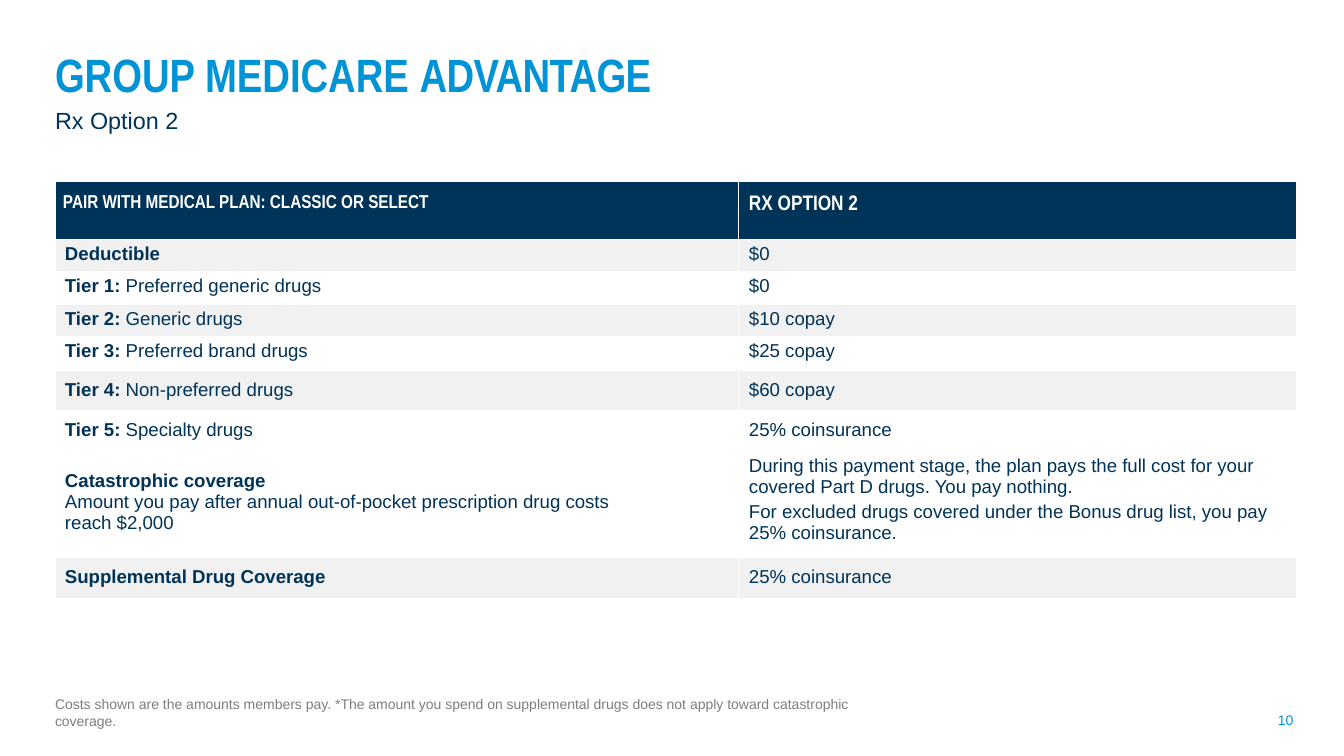
from dataclasses import dataclass

from lxml.etree import SubElement
from pptx import Presentation
from pptx.dml.color import RGBColor
from pptx.enum.text import MSO_ANCHOR
from pptx.oxml.ns import qn
from pptx.util import Emu, Pt

PX = 914400 // 84
NAVY, BLUE, GRAY, BAND, WHITE = "003358", "0093D6", "7E7E7E", "F1F1F1", "FFFFFF"
BODY_FONT, HEAD_FONT = "Arial", "Arial Narrow"


@dataclass(frozen=True)
class Span:
    text: str
    bold: bool = False
    tracking: float = 0


@dataclass(frozen=True)
class Para:
    spans: tuple[Span, ...]
    size: int = 16
    color: str = NAVY
    font: str = BODY_FONT
    before: float = 0


@dataclass(frozen=True)
class Row:
    height: int
    label: tuple[Para, ...]
    value: tuple[Para, ...]
    top: int
    label_top: int
    fill: str | None = None
    label_left: int = 10
    label_right: int = 0


def px(length: int) -> Emu:
    return Emu(length * PX)


def rgb(color: str) -> RGBColor:
    return RGBColor.from_string(color)


def write(frame, paras: tuple[Para, ...]) -> None:
    for index, item in enumerate(paras):
        para = frame.paragraphs[0] if index == 0 else frame.add_paragraph()
        para.space_before = Pt(item.before)
        para.font.name = item.font
        para.font.size = Pt(item.size)
        para.font.color.rgb = rgb(item.color)
        bolds = {span.bold for span in item.spans}
        if len(bolds) == 1:
            para.font.bold = bolds.pop()
        for span in item.spans:
            run = para.add_run()
            run.text = span.text
            if para.font.bold is None:
                run.font.bold = span.bold
            if span.tracking:
                run._r.get_or_add_rPr().set("spc", str(round(span.tracking * 100)))


def add_text(slide, left: int, top: int, width: int, height: int,
             paras: tuple[Para, ...], inset_left: int = 0, inset_top: int = 1) -> None:
    box = slide.shapes.add_textbox(px(left), px(top), px(width), px(height))
    frame = box.text_frame
    frame.word_wrap = True
    frame.margin_left, frame.margin_top = px(inset_left), px(inset_top)
    frame.margin_right = frame.margin_bottom = 0
    write(frame, paras)


def add_borders(cell) -> None:
    """Give the cell white one-point lines; call before setting its fill."""
    properties = cell._tc.get_or_add_tcPr()
    for side in ("a:lnL", "a:lnR", "a:lnT", "a:lnB"):
        line = SubElement(properties, qn(side), w=str(Pt(1)))
        SubElement(SubElement(line, qn("a:solidFill")), qn("a:srgbClr"), val=WHITE)


def fill_cell(cell, paras: tuple[Para, ...], fill: str | None,
              left: int, top: int, right: int = 0) -> None:
    add_borders(cell)
    if fill:
        cell.fill.solid()
        cell.fill.fore_color.rgb = rgb(fill)
    else:
        cell.fill.background()
    cell.margin_left, cell.margin_top = px(left), px(top)
    cell.margin_right, cell.margin_bottom = px(right), 0
    cell.vertical_anchor = MSO_ANCHOR.TOP
    write(cell.text_frame, paras)


def heading(text: str, size: int) -> tuple[Para, ...]:
    return (Para((Span(text, True),), size, WHITE, HEAD_FONT),)


def benefit(height: int, top: int, fill: str | None,
            bold: str, plain: str, value: str) -> Row:
    spans = (Span(bold, True),) + ((Span(plain),) if plain else ())
    return Row(height, (Para(spans),), (Para((Span(value),)),), top, top, fill)


ROWS = (
    Row(59, heading("PAIR WITH MEDICAL PLAN: CLASSIC OR SELECT", 16),
        heading("RX OPTION 2", 18), 14, 14, NAVY, label_left=8),
    benefit(32, 4, BAND, "Deductible", "", "$0"),
    benefit(33, 4, None, "Tier 1: ", "Preferred generic drugs", "$0"),
    benefit(32, 4, BAND, "Tier 2: ", "Generic drugs", "$10 copay"),
    benefit(34, 4, None, "Tier 3: ", "Preferred brand drugs", "$25 copay"),
    benefit(40, 9, BAND, "Tier 4: ", "Non-preferred drugs", "$60 copay"),
    benefit(41, 9, None, "Tier 5: ", "Specialty drugs", "25% coinsurance"),
    Row(106,
        (Para((Span("Catastrophic coverage", True),)),
         Para((Span("Amount you pay after annual out-of-pocket prescription "
                    "drug costs reach $2,000"),))),
        (Para((Span("During this payment stage, the plan pays the full cost for your "
                    "covered Part D drugs. You pay nothing."),)),
         Para((Span("For excluded drugs covered under the Bonus drug list, you pay "
                    "25% coinsurance."),), before=3.8)),
        4, 19, label_right=100),
    benefit(41, 9, BAND, "Supplemental Drug Coverage", "", "25% coinsurance"),
)
COLUMN_WIDTHS = (684, 558)


def add_benefits_table(slide) -> None:
    table = slide.shapes.add_table(
        len(ROWS), len(COLUMN_WIDTHS), px(55), px(181),
        px(sum(COLUMN_WIDTHS)), px(sum(row.height for row in ROWS))).table
    table.first_row = table.horz_banding = False
    for column, width in zip(table.columns, COLUMN_WIDTHS):
        column.width = px(width)
    for index, row in enumerate(ROWS):
        table.rows[index].height = px(row.height)
        fill_cell(table.cell(index, 0), row.label, row.fill,
                  row.label_left, row.label_top, row.label_right)
        fill_cell(table.cell(index, 1), row.value, row.fill, 10, row.top)


def main() -> None:
    deck = Presentation()
    deck.slide_width, deck.slide_height = px(16 * 84), px(9 * 84)
    slide = deck.slides.add_slide(deck.slide_layouts[6])
    title = (
        Para((Span("GROUP MEDICARE ", True), Span("ADVANTAGE", True, -0.5)),
             40, BLUE, HEAD_FONT),
        Para((Span("Rx Option 2"),), 20, before=3.7),
    )
    add_text(slide, 51, 32, 1242, 99, title, inset_left=4, inset_top=14)
    add_benefits_table(slide)
    note = ("Costs shown are the amounts members pay. *The amount you spend on "
            "supplemental drugs does not apply toward catastrophic coverage.")
    add_text(slide, 54, 695, 800, 36, (Para((Span(note),), 12, GRAY),), inset_left=1)
    add_text(slide, 1277, 711, 18, 19, (Para((Span("10"),), 12, BLUE),), inset_left=1)
    deck.save("out.pptx")


if __name__ == "__main__":
    main()
